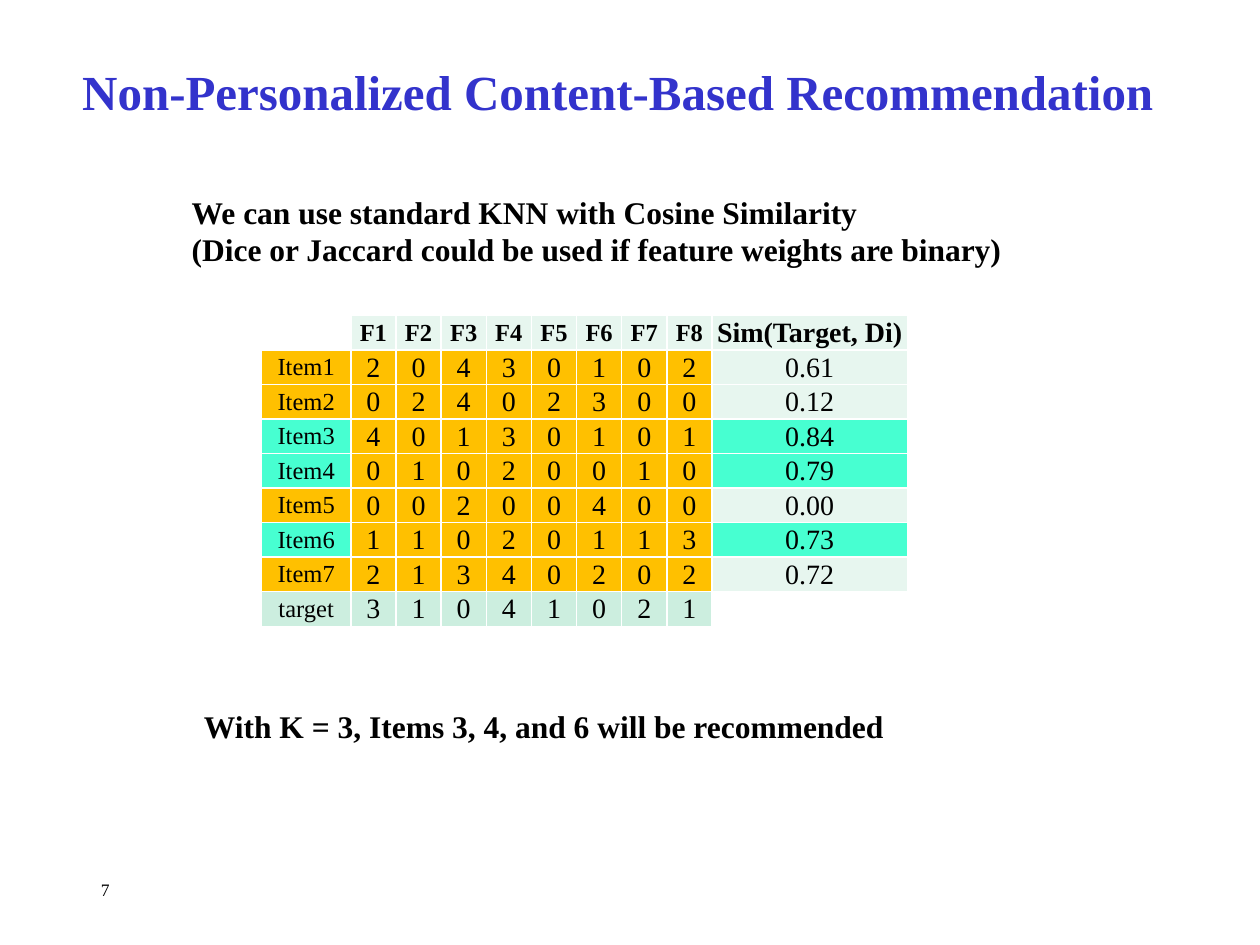
from lxml.etree import SubElement
from pptx import Presentation
from pptx.dml.color import RGBColor
from pptx.enum.text import MSO_ANCHOR, PP_ALIGN
from pptx.oxml.ns import qn
from pptx.util import Pt

FONT = "Times New Roman"
HUES = {
    "title": "3333CC", "text": "000000", "line": "FFFFFF", "blank": "FFFFFF",
    "head": "E7F6EF", "item": "FFC000", "pick": "47FFD1", "target": "CCEEDF",
}


def style(para, size, bold=False, hue="text"):
    for run in para.runs:
        run.font.name = FONT
        run.font.size = Pt(size)
        run.font.bold = bold
        run.font.color.rgb = RGBColor.from_string(HUES[hue])


def edge(cell):
    props = cell._tc.get_or_add_tcPr()
    for tag in ("a:lnL", "a:lnR", "a:lnT", "a:lnB"):
        line = SubElement(props, qn(tag), w=str(Pt(1)))
        fill = SubElement(line, qn("a:solidFill"))
        SubElement(fill, qn("a:srgbClr"), val=HUES["line"])


deck = Presentation()
deck.slide_width, deck.slide_height = Pt(720), Pt(540)
slide = deck.slides.add_slide(deck.slide_layouts[5])

# Title
title = slide.shapes.title
title.left, title.top, title.width, title.height = Pt(30), Pt(16), Pt(646), Pt(72)
title.text_frame.text = "Non-Personalized Content-Based Recommendation"
title.text_frame.vertical_anchor = MSO_ANCHOR.MIDDLE
para = title.text_frame.paragraphs[0]
para.alignment = PP_ALIGN.CENTER
style(para, 28, True, "title")

# Notes around the table and the page number
method = ("We can use standard KNN with Cosine Similarity \n"
          "(Dice or Jaccard could be used if feature weights are binary)")
result = "With K = 3, Items 3, 4, and 6 will be recommended"
for text, left, top, width, height, size, bold in (
    (method, 102.5, 106.5, 515.5, 51, 18, True),
    (result, 109.5, 400.5, 515.5, 29, 18, True),
    ("7", 50.5, 499, 270, 18, 10, False),
):
    box = slide.shapes.add_textbox(Pt(left), Pt(top), Pt(width), Pt(height))
    box.text_frame.word_wrap = True
    para = box.text_frame.paragraphs[0]
    para.text = text
    style(para, size, bold)

# Feature weights and similarity to the target
rows = [
    ["", *(f"F{n}" for n in range(1, 9)), "Sim(Target, Di)"],
    ["Item1", *"20430102", "0.61"],
    ["Item2", *"02402300", "0.12"],
    ["Item3", *"40130101", "0.84"],
    ["Item4", *"01020010", "0.79"],
    ["Item5", *"00200400", "0.00"],
    ["Item6", *"11020113", "0.73"],
    ["Item7", *"21340202", "0.72"],
    ["target", *"31041021", ""],
]
picks = {"Item3", "Item4", "Item6"}
wides = [51] + [25.8] * 8 + [111.6]
highs = [18.5] * 8 + [20]
frame = slide.shapes.add_table(len(rows), len(wides), Pt(149.5), Pt(180.3),
                               Pt(sum(wides)), Pt(sum(highs)))
table = frame.table
table.first_row = table.horz_banding = False
for col, wide in zip(table.columns, wides):
    col.width = Pt(wide)
for row, high in zip(table.rows, highs):
    row.height = Pt(high)

last = len(wides) - 1
for r, row in enumerate(rows):
    for c, text in enumerate(row):
        cell = table.cell(r, c)
        cell.margin_left = cell.margin_right = cell.margin_top = Pt(0.5)
        cell.margin_bottom = Pt(0)
        cell.vertical_anchor = MSO_ANCHOR.MIDDLE
        edge(cell)

        # Picked items stand out in the first and last columns
        if not text:
            hue = "blank"
        elif r == 0:
            hue = "head"
        elif row[0] == "target":
            hue = "target"
        elif row[0] in picks and c in (0, last):
            hue = "pick"
        else:
            hue = "head" if c == last else "item"
        cell.fill.solid()
        cell.fill.fore_color.rgb = RGBColor.from_string(HUES[hue])

        para = cell.text_frame.paragraphs[0]
        para.alignment = PP_ALIGN.CENTER
        if text:
            para.text = text
            small = c == 0 or (r == 0 and c < last)
            style(para, 14 if small else 16, r == 0)
        else:
            SubElement(para._p, qn("a:endParaRPr"), sz="1400")

deck.save("out.pptx")
